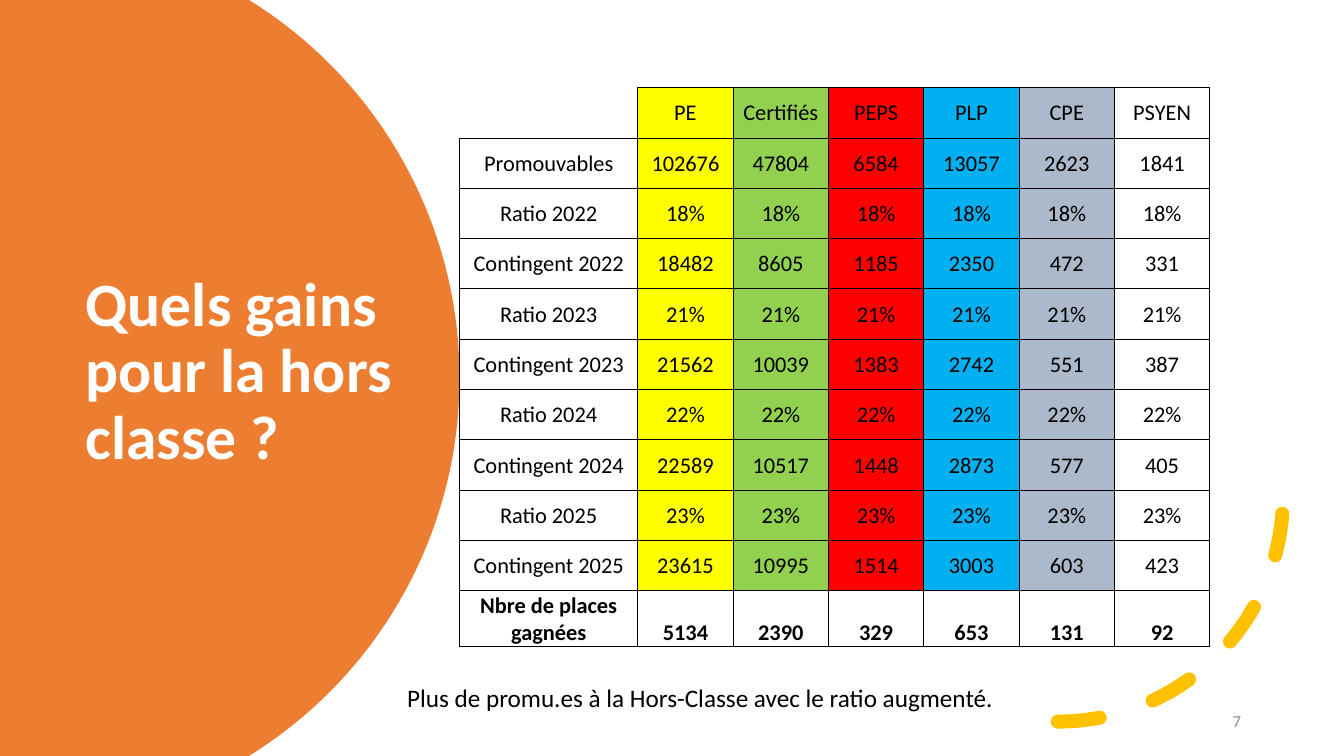
from math import asin, cos, sin
from lxml.etree import SubElement
from pptx import Presentation
from pptx.dml.color import RGBColor
from pptx.enum.dml import MSO_LINE
from pptx.enum.shapes import MSO_SHAPE
from pptx.enum.text import MSO_ANCHOR, MSO_AUTO_SIZE, PP_ALIGN
from pptx.oxml.ns import qn
from pptx.util import Pt

WIDE, HIGH = 960, 540
HEADS = ["PE", "Certifiés", "PEPS", "PLP", "CPE", "PSYEN"]
FILLS = [None, "FFFF00", "92D050", "FF0000", "00B0F0", "ACB9CA", None]
YEARS = [
    (2022, "18%", [18482, 8605, 1185, 2350, 472, 331]),
    (2023, "21%", [21562, 10039, 1383, 2742, 551, 387]),
    (2024, "22%", [22589, 10517, 1448, 2873, 577, 405]),
    (2025, "23%", [23615, 10995, 1514, 3003, 603, 423]),
]


def color(code):
    return RGBColor.from_string(code)


class Deck:
    font = "Calibri"
    ink = "000000"

    def __init__(self):
        self.file = Presentation()
        self.file.slide_width, self.file.slide_height = Pt(WIDE), Pt(HIGH)
        self.slide = self.file.slides.add_slide(self.file.slide_layouts[5])
        self.shapes = self.slide.shapes

    def words(self, frame, text, size, ink=None, bold=False, align=PP_ALIGN.LEFT):
        para = frame.paragraphs[0]
        para.alignment = align
        run = para.add_run()
        run.text = text
        run.font.name, run.font.size, run.font.bold = self.font, Pt(size), bold
        run.font.color.rgb = color(ink or self.ink)
        return para

    def title(self, text, box, size, ink):
        shape = self.shapes.title
        shape.left, shape.top, shape.width, shape.height = map(Pt, box)
        frame = shape.text_frame
        frame.word_wrap, frame.auto_size = True, MSO_AUTO_SIZE.NONE
        frame.vertical_anchor = MSO_ANCHOR.MIDDLE
        self.words(frame, text, size, ink, True).line_spacing = 0.9

    def text(self, text, box, size, ink=None, align=PP_ALIGN.LEFT, anchor=MSO_ANCHOR.TOP):
        frame = self.shapes.add_textbox(*map(Pt, box)).text_frame
        frame.word_wrap, frame.vertical_anchor = True, anchor
        self.words(frame, text, size, ink, align=align)

    def dome(self, mid, ray, fill):
        half, steps = asin(HIGH / 2 / ray), 80
        turns = [half * (2 * i / steps - 1) for i in range(steps + 1)]
        rim = [(Pt(mid + ray * cos(t)), Pt(HIGH / 2 + ray * sin(t))) for t in turns]
        form = self.shapes.build_freeform(0, 0)
        form.add_line_segments(rim + [(0, Pt(HIGH))], close=True)
        shape = form.convert_to_shape()
        shape.shadow.inherit = False
        shape.fill.solid()
        shape.fill.fore_color.rgb = color(fill)
        shape.line.fill.background()
        self.shapes.title.element.addprevious(shape.element)

    def arc(self, box, ink, width):
        shape = self.shapes.add_shape(MSO_SHAPE.ARC, *map(Pt, box))
        shape.shadow.inherit = False
        shape.fill.background()
        shape.line.color.rgb = color(ink)
        shape.line.width, shape.line.dash_style = Pt(width), MSO_LINE.DASH
        shape.element.spPr.find(qn("a:ln")).set("cap", "rnd")
        shape.element.spPr.find(qn("a:xfrm")).set("flipV", "1")

    def border(self, cell, sides):
        props = cell._tc.get_or_add_tcPr()
        for side in "LRTB":
            line = SubElement(props, qn("a:ln" + side), w=str(Pt(0.5)))
            if side in sides:
                fill = SubElement(line, qn("a:solidFill"))
                SubElement(fill, qn("a:srgbClr"), val=self.ink)
            else:
                SubElement(line, qn("a:noFill"))

    def cell(self, cell, text, fill, bold, anchor):
        self.border(cell, "LRTB" if text else "RB")
        if fill:
            cell.fill.solid()
            cell.fill.fore_color.rgb = color(fill)
        else:
            cell.fill.background()
        cell.margin_left = cell.margin_right = cell.margin_top = Pt(0.7)
        cell.margin_bottom = 0
        cell.vertical_anchor = anchor
        if text:
            self.words(cell.text_frame, text, 16, bold=bold, align=PP_ALIGN.CENTER)

    def table(self, rows, left, top, wides, highs):
        box = map(Pt, (left, top, sum(wides), sum(highs)))
        table = self.shapes.add_table(len(rows), len(wides), *box).table
        table.first_row = table.horz_banding = False
        for col, wide in zip(table.columns, wides):
            col.width = Pt(wide)
        for r, row in enumerate(rows):
            table.rows[r].height = Pt(highs[r])
            last = r == len(rows) - 1
            for c, item in enumerate(row):
                low = last and c > 0
                anchor = MSO_ANCHOR.BOTTOM if low else MSO_ANCHOR.MIDDLE
                fill = FILLS[c] if c and not last else None
                self.cell(table.cell(r, c), str(item), fill, last, anchor)


def main():
    deck = Deck()
    deck.dome(10.8, 317.5, "ED7D31")
    deck.title("Quels gains pour la hors classe ?", (54, 90.7, 252, 351.4), 44, "FFFFFF")
    deck.arc((594.7, 193.7, 321.8, 321.8), "FFC000", 10)

    rows = [["", *HEADS], ["Promouvables", 102676, 47804, 6584, 13057, 2623, 1841]]
    for year, ratio, counts in YEARS:
        rows.append([f"Ratio {year}"] + [ratio] * len(HEADS))
        rows.append([f"Contingent {year}", *counts])
    rows.append(["Nbre de places gagnées", 5134, 2390, 329, 653, 131, 92])
    wides = [127.3] + [68.1] * len(HEADS)
    highs = [35.95] * (len(rows) - 1) + [34]
    deck.table(rows, 328.3, 62.5, wides, highs)

    deck.text("7", (751, 500.5, 142.6, 28.8), 12, "8C8C8C", PP_ALIGN.RIGHT, MSO_ANCHOR.MIDDLE)
    deck.text("Plus de promu.es à la Hors-Classe avec le ratio augmenté.",
              (283.7, 484, 457.2, 29), 18)
    deck.file.save("out.pptx")


if __name__ == "__main__":
    main()
